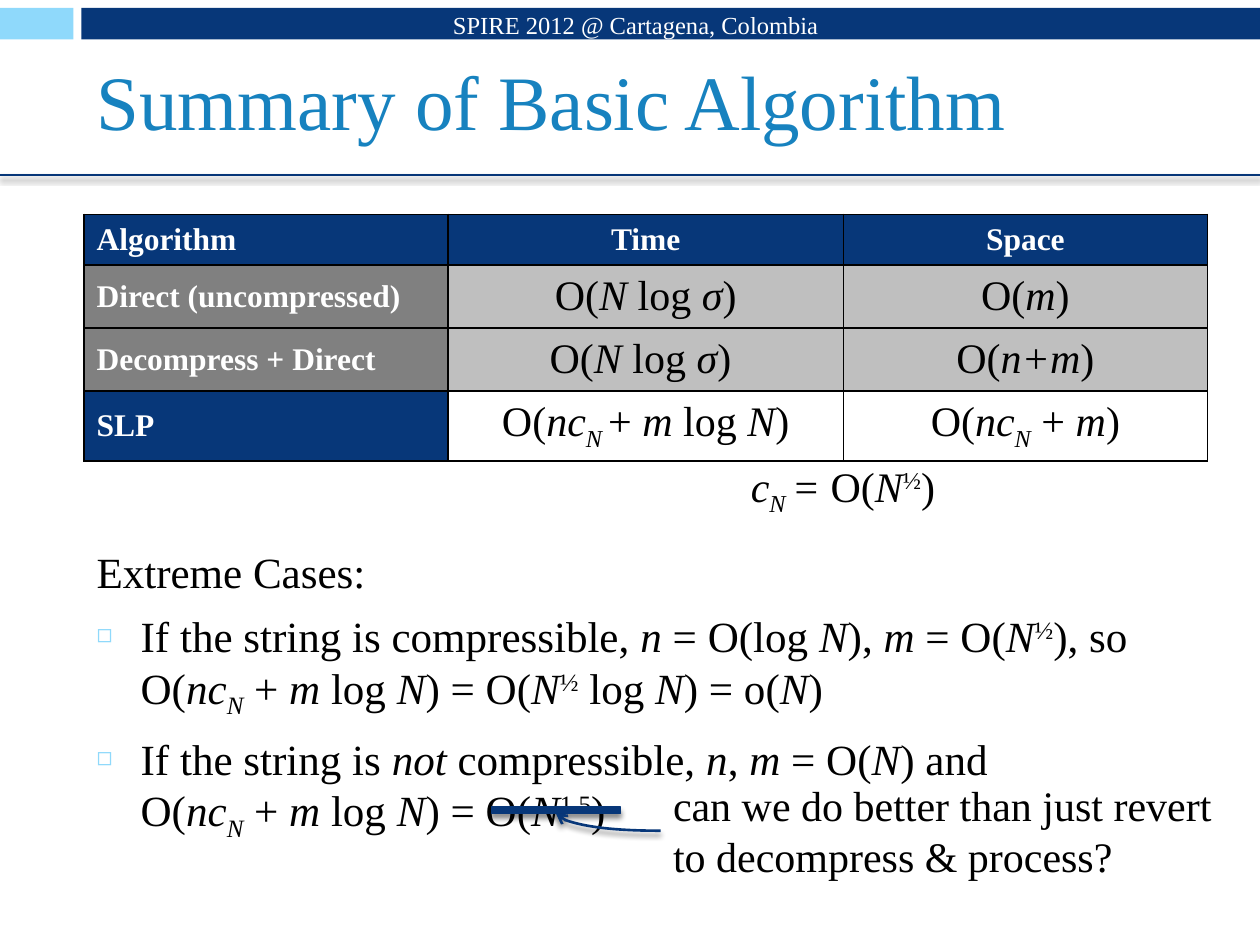
from lxml import etree
from pptx import Presentation
from pptx.dml.color import RGBColor
from pptx.enum.shapes import MSO_CONNECTOR, MSO_SHAPE
from pptx.enum.text import MSO_ANCHOR, MSO_AUTO_SIZE, PP_ALIGN
from pptx.oxml import parse_xml
from pptx.oxml.ns import nsdecls, qn
from pptx.util import Pt

NAVY = RGBColor(0x07, 0x37, 0x79)
SKY = RGBColor(0x8F, 0xD9, 0xFB)
BLUE = RGBColor(0x17, 0x82, 0xBF)
GRAY = RGBColor(0x80, 0x80, 0x80)
SILVER = RGBColor(0xBF, 0xBF, 0xBF)
WHITE = RGBColor(0xFF, 0xFF, 0xFF)
BLACK = RGBColor(0, 0, 0)
MARKS = {"*": "italic", "_": -25000, "^": 30000}


def write(paragraph, text, size, color=BLACK, bold=False):
    """Markers toggle styles: * italic, _ subscript, ^ superscript."""
    font = paragraph.font
    font.name, font.size, font.bold = "Times New Roman", Pt(size), bold
    font.color.rgb = color
    italic, baseline, piece = False, 0, ""
    for char in text + "*":
        if char not in MARKS and char != "\n":
            piece += char
            continue
        if piece:
            run = paragraph.add_run()
            run.text = piece
            if italic:
                run.font.italic = True
            if baseline:
                run.font._element.set("baseline", str(baseline))
            piece = ""
        if char == "\n":
            paragraph.add_line_break()
        elif char == "*":
            italic = not italic
        else:
            baseline = 0 if baseline else MARKS[char]


def add_shadow(shape):
    properties = shape._element.spPr
    for old in properties.findall(qn("a:effectLst")):
        properties.remove(old)
    properties.append(parse_xml(
        f'<a:effectLst {nsdecls("a")}><a:outerShdw blurRad="{Pt(3)}" dist="{Pt(2.4)}" '
        'dir="5400000" rotWithShape="0"><a:srgbClr val="000000"><a:alpha val="45000"/>'
        '</a:srgbClr></a:outerShdw></a:effectLst>'))


prs = Presentation()
prs.slide_width, prs.slide_height = Pt(720), Pt(540)
slide = prs.slides.add_slide(prs.slide_layouts[1])
shapes = slide.shapes

for left, width, color in [(0, 42, SKY), (46.5, 673.5, NAVY)]:
    band = shapes.add_shape(MSO_SHAPE.RECTANGLE, Pt(left), Pt(4.5), Pt(width), Pt(18))
    band.fill.solid()
    band.fill.fore_color.rgb = color
    band.line.fill.background()
    band.shadow.inherit = False

title_rule = shapes.add_connector(MSO_CONNECTOR.STRAIGHT, 0, Pt(100), Pt(720), Pt(100))
title_rule.line.color.rgb = NAVY
title_rule.line.width = Pt(1.5)
add_shadow(title_rule)

title = shapes.title
title.left, title.top, title.width, title.height = Pt(48), Pt(18), Pt(642), Pt(78)
title.text_frame.vertical_anchor = MSO_ANCHOR.MIDDLE
title.text_frame.auto_size = MSO_AUTO_SIZE.NONE
heading = title.text_frame.paragraphs[0]
heading.alignment = PP_ALIGN.LEFT
write(heading, "Summary of Basic Algorithm", 44, BLUE)

venue = shapes.add_textbox(Pt(48), Pt(-0.5), Pt(427), Pt(28.8)).text_frame
venue.word_wrap = True
venue.vertical_anchor = MSO_ANCHOR.MIDDLE
venue.paragraphs[0].alignment = PP_ALIGN.RIGHT
write(venue.paragraphs[0], "SPIRE 2012 @ Cartagena, Colombia", 14, WHITE)

cases = slide.placeholders[1]
cases.left, cases.top, cases.width, cases.height = Pt(48), Pt(308), Pt(642), Pt(167)
cases.text_frame.auto_size = MSO_AUTO_SIZE.NONE
case_texts = [
    "Extreme Cases:",
    "If the string is compressible, *n* = O(log *N*), *m* = O(*N*^½^), so\n"
    "O(*nc_N_* + *m* log *N*) = O(*N*^½^ log *N*) = o(*N*)",
    "If the string is *not* compressible, *n*, *m *= O(*N*) and \n"
    "O(*nc_N_* + *m* log *N*) = O(*N*^1.5^)",
]
for index, text in enumerate(case_texts):
    frame = cases.text_frame
    paragraph = frame.add_paragraph() if index else frame.paragraphs[0]
    paragraph.space_before = Pt(7)
    write(paragraph, text, 24.6)
    indent = Pt(25.2) if index else 0
    properties = paragraph._p.get_or_add_pPr()
    properties.set("marL", str(indent))
    properties.set("indent", str(-indent))
    if index:
        bullet = [f'<a:buClr {nsdecls("a")}><a:srgbClr val="{SKY}"/></a:buClr>',
                  f'<a:buSzPct {nsdecls("a")} val="60000"/>',
                  f'<a:buChar {nsdecls("a")} char="◻"/>']
    else:
        bullet = [f'<a:buNone {nsdecls("a")}/>']
    for part in bullet:
        properties.find(qn("a:defRPr")).addprevious(parse_xml(part))

rows = [
    ("Algorithm", "Time", "Space", NAVY, NAVY, 26),
    ("Direct (uncompressed)", "O(*N* log *σ*)", "O(*m*)", GRAY, SILVER, 32.4),
    ("Decompress + Direct", "O(*N* log *σ*) ", "O(*n+m*)", GRAY, SILVER, 32.4),
    ("SLP", "O(*nc_N _*+ *m *log *N*)", "O(*nc_N_* + *m*)", NAVY, WHITE, 32.4),
]
costs = shapes.add_table(4, 3, Pt(48), Pt(122.5), Pt(642), Pt(123.2)).table
for column, width in zip(costs.columns, (208, 226, 208)):
    column.width = Pt(width)
for r, (*texts, label_fill, cost_fill, height) in enumerate(rows):
    costs.rows[r].height = Pt(height)
    for c, text in enumerate(texts):
        cell = costs.cell(r, c)
        cell.vertical_anchor = MSO_ANCHOR.MIDDLE
        cell.fill.solid()
        cell.fill.fore_color.rgb = cost_fill if c else label_fill
        paragraph = cell.text_frame.paragraphs[0]
        paragraph.alignment = PP_ALIGN.CENTER if c else PP_ALIGN.LEFT
        if r and c:
            write(paragraph, text, 24)
        else:
            write(paragraph, text, 18, WHITE, True)
        for position, side in enumerate(("lnL", "lnR", "lnT", "lnB")):
            cell._tc.get_or_add_tcPr().insert(position, parse_xml(
                f'<a:{side} {nsdecls("a")} w="{Pt(1)}"><a:solidFill>'
                f'<a:srgbClr val="{BLACK}"/></a:solidFill></a:{side}>'))

bound = shapes.add_textbox(Pt(422), Pt(259.5), Pt(127.5), Pt(36)).text_frame
bound.word_wrap = False
write(bound.paragraphs[0], "*c_N _= *O(*N*^½^)", 24)

question = shapes.add_textbox(Pt(377.5), Pt(442), Pt(325), Pt(65.5))
question.text_frame.word_wrap = True
write(question.text_frame.paragraphs[0],
      "can we do better than just revert to decompress & process?", 24)

strike = shapes.add_shape(MSO_SHAPE.RECTANGLE, Pt(281), Pt(461.2), Pt(73.5), Pt(3.8))
strike.fill.solid()
strike.fill.fore_color.rgb = NAVY
strike.line.color.rgb = NAVY
strike.line.width = Pt(0.8)
add_shadow(strike)

pointer = shapes.add_connector(MSO_CONNECTOR.CURVE, Pt(377.5), Pt(474.7), Pt(317.7), Pt(465))
pointer.begin_connect(question, 1)
pointer.end_connect(strike, 2)
pointer._element.spPr.find(qn("a:prstGeom")).set("prst", "curvedConnector2")
pointer.line.color.rgb = NAVY
pointer.line.width = Pt(1.5)
etree.SubElement(pointer.line._get_or_add_ln(), qn("a:tailEnd"), type="arrow")
add_shadow(pointer)

prs.save("out.pptx")
